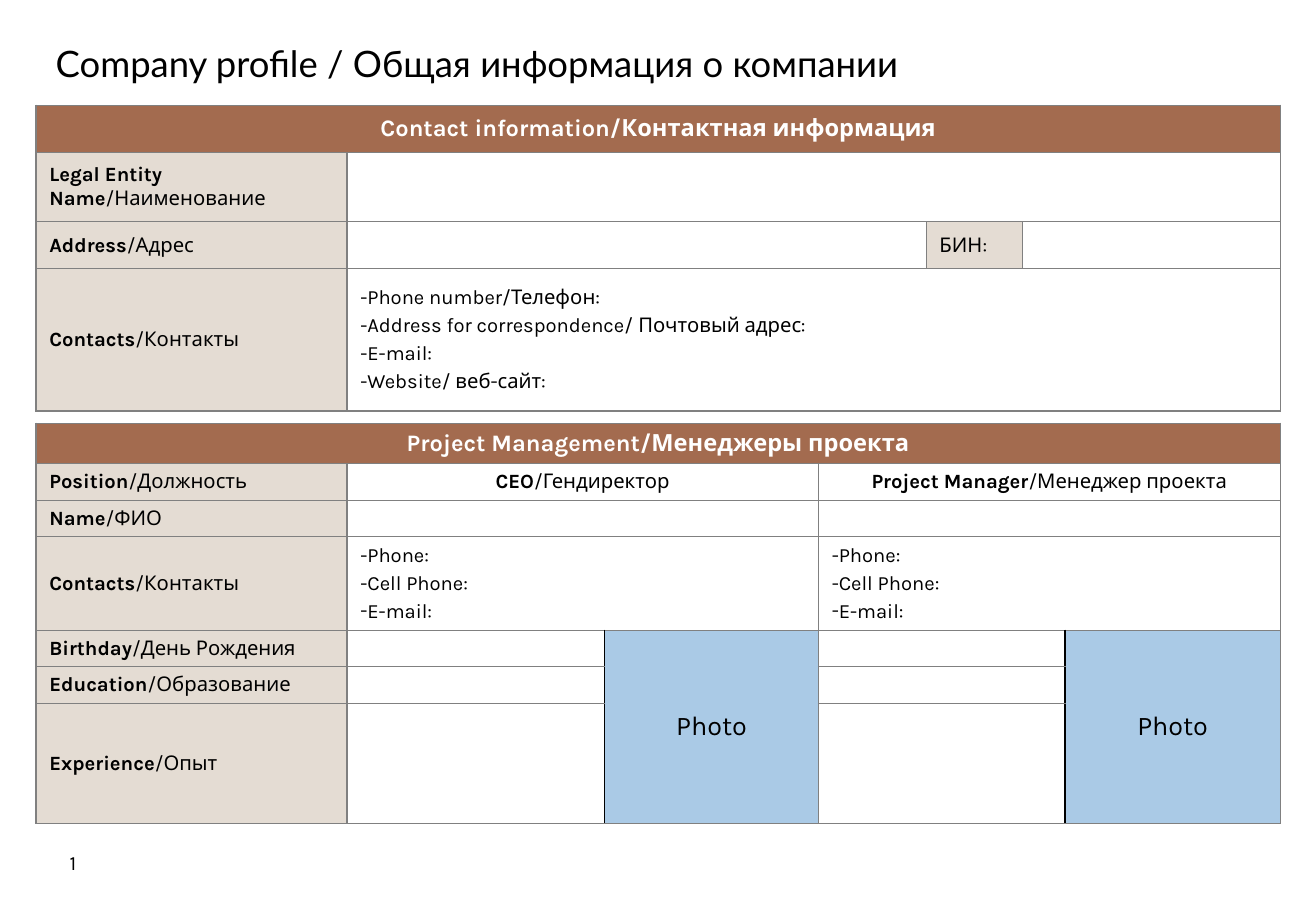
from dataclasses import dataclass

from lxml.etree import SubElement
from pptx import Presentation
from pptx.dml.color import RGBColor as RGB
from pptx.enum.text import MSO_ANCHOR as Anchor, PP_ALIGN as Align
from pptx.oxml.ns import qn
from pptx.util import Inches, Pt


@dataclass(frozen=True)
class Theme:
    title_font: str = "Lato"
    body_font: str = "Karla"
    ink: str = "000000"
    paper: str = "FFFFFF"
    band: str = "A36B4F"
    label: str = "E4DCD3"
    photo: str = "AACAE6"
    rule: str = "808080"
    title_size: float = 21.6
    heading_size: int = 14
    body_size: int = 12
    photo_size: int = 16
    line_gap: float = 2.5
    rule_width: float = 0.75
    photo_rule_width: float = 1


class ProfileSlide:
    """Places elements on a grid of 1083 columns by 750 rows."""

    COLUMNS, ROWS = 1083, 750

    def __init__(self, deck, theme):
        self.theme = theme
        self.slide = deck.slides.add_slide(deck.slide_layouts[6])
        self.column = deck.slide_width / self.COLUMNS
        self.row = deck.slide_height / self.ROWS

    def place(self, left, top, width, height):
        return (round(left * self.column), round(top * self.row),
                round(width * self.column), round(height * self.row))

    def style(self, run, size, color=None, bold=False, font=None):
        run.font.name = font or self.theme.body_font
        run.font.size = Pt(size)
        run.font.bold = bold
        run.font.color.rgb = RGB.from_string(color or self.theme.ink)

    def text(self, box, content, size, font=None, align=Align.LEFT):
        frame = self.slide.shapes.add_textbox(*self.place(*box)).text_frame
        frame.word_wrap = True
        frame.vertical_anchor = Anchor.MIDDLE
        frame.text = content
        frame.paragraphs[0].alignment = align
        self.style(frame.paragraphs[0].runs[0], size, font=font)

    def table(self, left, top, widths, heights):
        """Add an empty ruled table whose cells have no fill."""
        box = self.place(left, top, sum(widths), sum(heights))
        grid = self.slide.shapes.add_table(len(heights), len(widths), *box).table
        grid.first_row = grid.horz_banding = False
        for column, width in zip(grid.columns, widths):
            column.width = round(width * self.column)
        for row, height in zip(grid.rows, heights):
            row.height = round(height * self.row)
        for cell in grid.iter_cells():
            cell.vertical_anchor = Anchor.MIDDLE
            cell.margin_left = cell.margin_right = Inches(0.11)
            for side in ("lnL", "lnR", "lnT", "lnB"):
                self.border(cell, side, self.theme.rule, self.theme.rule_width)
            cell.fill.background()
            blank = SubElement(cell.text_frame.paragraphs[0]._p, qn("a:endParaRPr"),
                               sz=str(self.theme.body_size * 100))
            SubElement(blank, qn("a:latin"), typeface=self.theme.body_font)
        return grid

    def border(self, cell, side, color, width):
        properties = cell._tc.get_or_add_tcPr()
        line = properties.find(qn(f"a:{side}"))
        if line is None:
            line = SubElement(properties, qn(f"a:{side}"))
        for child in list(line):
            line.remove(child)
        line.set("w", str(Pt(width)))
        fill = SubElement(line, qn("a:solidFill"))
        SubElement(fill, qn("a:srgbClr"), val=color)

    def fill(self, cell, color):
        cell.fill.solid()
        cell.fill.fore_color.rgb = RGB.from_string(color)

    def heading(self, grid, content):
        cell = grid.cell(0, 0)
        cell.merge(grid.cell(0, len(grid.columns) - 1))
        self.fill(cell, self.theme.band)
        self.caption(cell, content, self.theme.heading_size, self.theme.paper, True)

    def caption(self, cell, content, size, color=None, bold=False):
        """Write one centred line in a cell."""
        cell.text_frame.text = content
        line = cell.text_frame.paragraphs[0]
        line.alignment = Align.CENTER
        self.style(line.runs[0], size, color, bold)

    def bilingual(self, cell, english, russian, align=Align.LEFT):
        line = cell.text_frame.paragraphs[0]
        line.alignment = align
        for content, bold in ((english, True), (f"/{russian}", False)):
            run = line.add_run()
            run.text = content
            self.style(run, self.theme.body_size, bold=bold)

    def labels(self, grid, names):
        for row, (english, russian) in enumerate(names, start=1):
            self.fill(grid.cell(row, 0), self.theme.label)
            self.bilingual(grid.cell(row, 0), english, russian)

    def dashes(self, cell, items):
        """Write a list with dash bullets in a cell."""
        cell.text_frame.text = "\n".join(items)
        for index, line in enumerate(cell.text_frame.paragraphs):
            properties = line._p.get_or_add_pPr()
            properties.set("marL", "0")
            properties.set("indent", "0")
            SubElement(properties, qn("a:buFont"), typeface=self.theme.body_font)
            SubElement(properties, qn("a:buChar"), char="-")
            if index:
                line.space_before = Pt(self.theme.line_gap)
            self.style(line.runs[0], self.theme.body_size)

    def photo(self, grid, first, last, column):
        for row in range(first, last + 1):
            self.border(grid.cell(row, column - 1), "lnR",
                        self.theme.ink, self.theme.photo_rule_width)
            self.border(grid.cell(row, column), "lnL",
                        self.theme.ink, self.theme.photo_rule_width)
        frame = grid.cell(first, column)
        frame.merge(grid.cell(last, column))
        self.fill(frame, self.theme.photo)
        self.caption(frame, "Photo", self.theme.photo_size)


def add_contact_information(page):
    contact = page.table(29.6, 86.5, (256, 476.5, 79.5, 212), (39, 57, 39, 117))
    page.heading(contact, "Contact information/Контактная информация")
    page.labels(contact, (("Legal Entity Name", "Наименование"),
                          ("Address", "Адрес"), ("Contacts", "Контакты")))
    for row in (1, 3):
        contact.cell(row, 1).merge(contact.cell(row, 3))
    tax_number = contact.cell(2, 2)
    page.fill(tax_number, page.theme.label)
    tax_number.text_frame.text = "БИН:"
    page.style(tax_number.text_frame.paragraphs[0].runs[0], page.theme.body_size)
    page.dashes(contact.cell(3, 1), (
        "Phone number/Телефон:", "Address for correspondence/ Почтовый адрес:",
        "E-mail:", "Website/ веб-сайт:"))


def add_project_management(page):
    line = 29.6
    managers = page.table(29.6, 348.4, (256, 212, 176, 203, 177),
                          (33, line, line, 75, line, line, 99))
    page.heading(managers, "Project Management/Менеджеры проекта")
    page.labels(managers, (
        ("Position", "Должность"), ("Name", "ФИО"), ("Contacts", "Контакты"),
        ("Birthday", "День Рождения"), ("Education", "Образование"),
        ("Experience", "Опыт")))
    positions = (("CEO", "Гендиректор"), ("Project Manager", "Менеджер проекта"))
    for column, position in zip((1, 3), positions):
        for row in (1, 2, 3):
            managers.cell(row, column).merge(managers.cell(row, column + 1))
        page.bilingual(managers.cell(1, column), *position, align=Align.CENTER)
        page.dashes(managers.cell(3, column), ("Phone:", "Cell Phone:", "E-mail:"))
        page.photo(managers, 4, 6, column + 1)


def main():
    deck = Presentation()
    deck.slide_width, deck.slide_height = Inches(10.83), Inches(7.5)
    theme = Theme()
    page = ProfileSlide(deck, theme)
    page.text((36, 28.5, 1001, 46), "Company profile / Общая информация о компании",
              theme.title_size, theme.title_font)
    add_contact_information(page)
    add_project_management(page)
    page.text((30, 690, 60, 40), "1", theme.body_size, align=Align.CENTER)
    deck.save("out.pptx")


if __name__ == "__main__":
    main()
